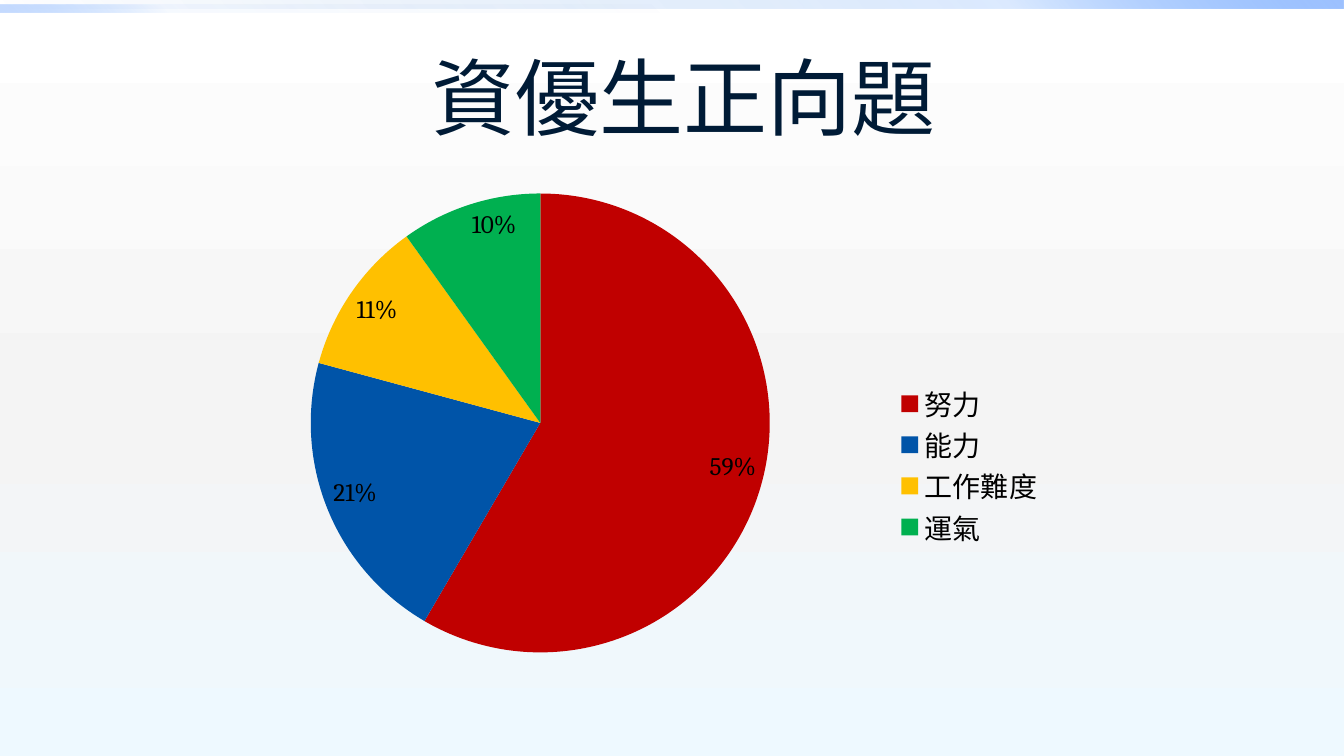
from lxml.etree import SubElement
from pptx import Presentation
from pptx.chart.data import CategoryChartData
from pptx.dml.color import RGBColor
from pptx.enum.chart import XL_CHART_TYPE, XL_LABEL_POSITION, XL_LEGEND_POSITION
from pptx.enum.shapes import MSO_SHAPE
from pptx.enum.text import MSO_ANCHOR, PP_ALIGN
from pptx.oxml import parse_xml
from pptx.oxml.ns import nsdecls, qn
from pptx.util import Pt

INK = {
    "title": "001B36", "text": "000000",
    "white": "FFFFFF", "grey": "F4F4F4", "ice": "EEF9FF",
    "deep": "0058B7", "mid": "4F95FF", "pale": "9EC2FF",
}
PIE = {  # label: (value, colour)
    "努力": (59, "C00000"),
    "能力": (21, "0054A8"),
    "工作難度": (11, "FFC000"),
    "運氣": (10, "00B050"),
}
WIDE, HIGH = 960, 540


def style(item, values):
    for name, value in values.items():
        setattr(item, name, value)


def shade(owner, stops, angle):
    """Fill a shape or background with (place, colour, opacity) stops."""
    owner.fill.gradient()
    old = next(owner_root(owner).iter(qn("a:gradFill")))
    grad = SubElement(old, qn("a:gsLst"))
    old.remove(grad)
    for child in list(old):
        old.remove(child)
    old.append(grad)
    for place, name, alpha in stops:
        stop = SubElement(grad, qn("a:gs"), pos=str(place * 1000))
        tint = SubElement(stop, qn("a:srgbClr"), val=INK[name])
        SubElement(tint, qn("a:alpha"), val=str(alpha * 1000))
    SubElement(old, qn("a:lin"), ang=str(angle * 60000), scaled="0")


def owner_root(owner):
    return owner.element if hasattr(owner, "element") else owner._cSld


def place(parent, index, box, inner=False):
    """Set a manual layout, as fractions of the chart."""
    for old in parent.findall(qn("c:layout")):
        parent.remove(old)
    target = '<c:layoutTarget val="inner"/>' if inner else ""
    modes = "".join(f'<c:{k}Mode val="edge"/>' for k in "xy")
    sizes = "".join(f'<c:{k} val="{v}"/>' for k, v in zip("xywh", box))
    parent.insert(index, parse_xml(
        f'<c:layout {nsdecls("c")}><c:manualLayout>{target}{modes}{sizes}'
        "</c:manualLayout></c:layout>"))


def add_bar(slide, box, last, angle):
    bar = slide.shapes.add_shape(MSO_SHAPE.RECTANGLE, *map(Pt, box))
    bar.shadow.inherit = False
    bar.line.fill.background()
    soft, full = last
    shade(bar, [(0, "deep", 0), (75, "mid", soft), (100, "pale", full)], angle)


def add_back(slide):
    # Background and the two strips along the top edge
    shade(slide.background,
          [(0, "white", 100), (55, "grey", 100), (100, "ice", 100)], 90)
    add_bar(slide, (0, 0, WIDE, 6), (20, 100), 315)
    add_bar(slide, (0, 3, WIDE / 2, 6), (5, 60), 135)


def add_title(slide, box, text):
    frame = slide.shapes.add_textbox(*map(Pt, box)).text_frame
    style(frame, {"word_wrap": True, "vertical_anchor": MSO_ANCHOR.MIDDLE,
                  "margin_top": 0, "margin_bottom": Pt(53)})
    para = frame.paragraphs[0]
    para.alignment = PP_ALIGN.CENTER
    run = para.add_run()
    run.text = text
    face = "Noto Sans CJK SC"
    style(run.font, {"size": Pt(60), "name": face})
    run.font.color.rgb = RGBColor.from_string(INK["title"])
    SubElement(run.font._element, qn("a:ea"), typeface=face)


def add_pie(slide, box):
    data = CategoryChartData()
    data.categories = list(PIE)
    data.add_series("Series 1", [value for value, _ in PIE.values()])
    chart = slide.shapes.add_chart(
        XL_CHART_TYPE.PIE, *map(Pt, box), data).chart
    style(chart, {"has_title": False, "has_legend": True})
    style(chart.font, {"name": "Cambria", "size": Pt(18)})
    chart.font.color.rgb = RGBColor.from_string(INK["text"])

    # Slices and their labels
    plot = chart.plots[0]
    style(plot, {"vary_by_categories": True, "has_data_labels": True})
    style(plot.data_labels, {
        "show_value": True, "number_format": '0"%"',
        "number_format_is_linked": False,
        "position": XL_LABEL_POSITION.INSIDE_END})
    for i, (_, tint) in enumerate(PIE.values()):
        fill = plot.series[0].points[i].format.fill
        fill.solid()
        fill.fore_color.rgb = RGBColor.from_string(tint)

    # Legend and layout
    legend = chart.legend
    style(legend, {"position": XL_LEGEND_POSITION.RIGHT,
                   "include_in_layout": False})
    style(legend.font, {"size": Pt(20), "name": "Cambria"})
    legend.font.color.rgb = RGBColor.from_string(INK["text"])
    root = chart.element
    place(next(root.iter(qn("c:plotArea"))), 0, (0.19, 0, 0.38, 0.92), True)
    place(next(root.iter(qn("c:legend"))), 1, (0.67, 0.38, 0.13, 0.33))


def main():
    deck = Presentation()
    style(deck, {"slide_width": Pt(WIDE), "slide_height": Pt(HIGH)})
    slide = deck.slides.add_slide(deck.slide_layouts[6])
    add_back(slide)
    add_title(slide, (56, 50, 864, 90), "資優生正向題")
    add_pie(slide, (57.6, 138.2, 864, 356.4))
    deck.save("out.pptx")


if __name__ == "__main__":
    main()
